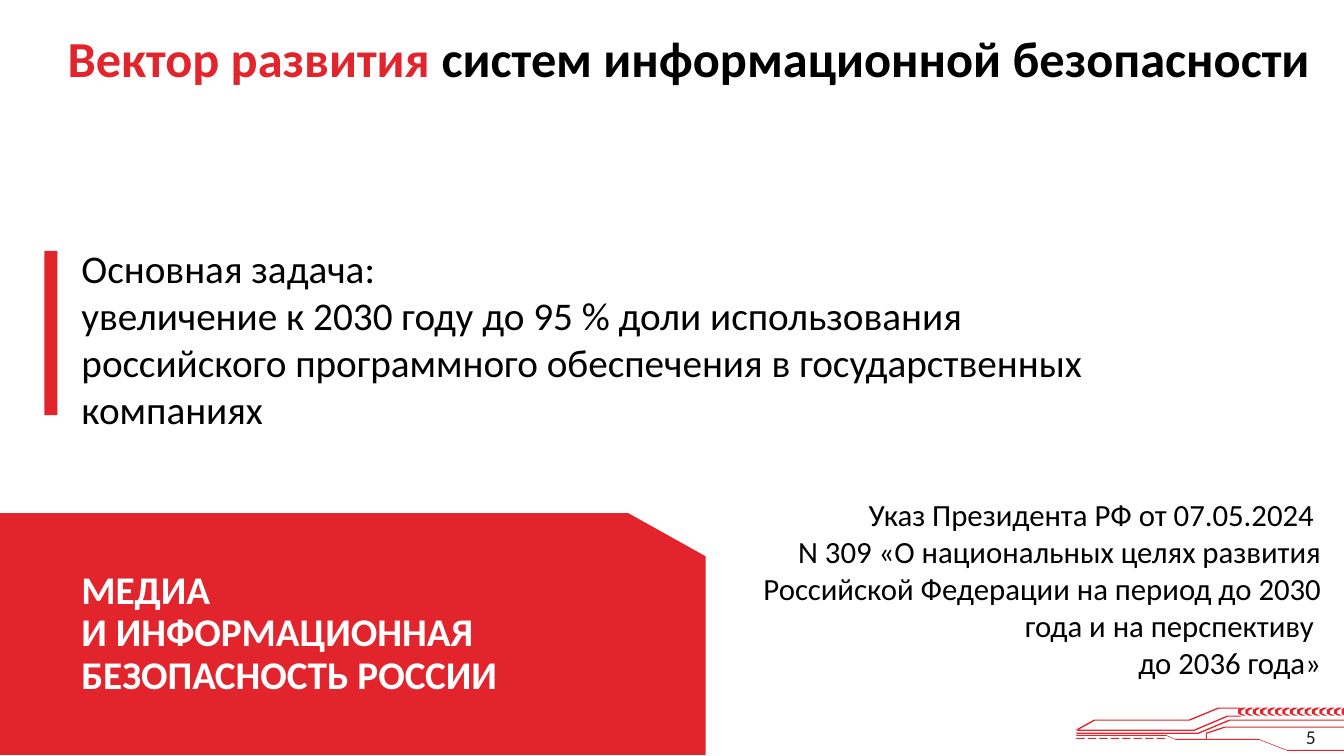
from pptx import Presentation
from pptx.dml.color import RGBColor
from pptx.enum.shapes import MSO_SHAPE
from pptx.enum.text import MSO_ANCHOR as Anchor, MSO_AUTO_SIZE as AutoSize, PP_ALIGN as Align
from pptx.util import Inches, Pt

RED = RGBColor(0xE2, 0x25, 0x2C)
BLACK = RGBColor(0, 0, 0)
DARK = RGBColor(0x23, 0x1F, 0x20)
WHITE = RGBColor(0xFF, 0xFF, 0xFF)
FONT = "Calibri"
TRACE_WIDTH = 0.01
TRACES = [
    [(0, 0.27), (0.89, 0.27), (0.98, 0.31), (1.29, 0.31)],
    [(0, 0.22), (0.18, 0.12), (1.12, 0.12), (1.41, 0), (1.63, 0)],
    [(0, 0.22), (1.17, 0.22), (1.5, 0.08), (1.63, 0.08)],
    [(0, 0.25), (1.21, 0.25), (1.52, 0.12), (2.66, 0.12)],
    [(2.66, 0.19), (1.47, 0.19), (1.29, 0.25), (1.29, 0.31),
     (1.81, 0.31), (2.09, 0.42), (2.66, 0.42)],
]
HOOK = [(0.08, 0), (0.04, 0), (0, 0.02), (0, 0.06),
        (0.04, 0.08), (0.08, 0.08), (0.03, 0.06), (0.03, 0.03)]


def paint_red(shape):
    shape.shadow.inherit = False
    shape.fill.solid()
    shape.fill.fore_color.rgb = RED
    shape.line.fill.background()


def style(font, size, color, bold=False):
    font.name = FONT
    font.size = Pt(size)
    font.bold = bold
    font.color.rgb = color


def add_outline(slide, contours):
    points = [[(Inches(x), Inches(y)) for x, y in contour] for contour in contours]
    builder = slide.shapes.build_freeform(*points[0][0], scale=1.0)
    builder.add_line_segments(points[0][1:], close=True)
    for contour in points[1:]:
        builder.move_to(*contour[0])
        builder.add_line_segments(contour[1:], close=True)
    paint_red(builder.convert_to_shape())


def add_text(slide, box, paragraphs, size, color, bold=False, align=Align.LEFT,
             anchor=Anchor.TOP, line_spacing=None, inset=None):
    frame = slide.shapes.add_textbox(*map(Inches, box)).text_frame
    frame.word_wrap = True
    frame.vertical_anchor = anchor
    if inset is not None:
        frame.margin_left = frame.margin_right = Inches(inset)
        frame.margin_top = frame.margin_bottom = Inches(inset)
    for index, text in enumerate(paragraphs):
        paragraph = frame.paragraphs[0] if index == 0 else frame.add_paragraph()
        paragraph.text = text
        paragraph.alignment = align
        paragraph.line_spacing = line_spacing
        style(paragraph.font, size, color, bold)


def add_circuit(slide, left, top, width):
    def ribbon(trace):
        return trace + [(x + TRACE_WIDTH, y + TRACE_WIDTH) for x, y in reversed(trace)]

    dashes = [ribbon([(0.114 * i, 0.3), (0.114 * i + 0.08, 0.3)]) for i in range(8)]
    hooks = [[(1.61 + 0.0733 * i + x, y) for x, y in HOOK] for i in range(15)]
    contours = dashes + [ribbon(trace) for trace in TRACES] + hooks
    add_outline(slide, [[(left + min(x, width), top + y) for x, y in contour]
                        for contour in contours])


def add_title(slide, box):
    title = slide.shapes.title
    title.left, title.top, title.width, title.height = map(Inches, box)
    frame = title.text_frame
    frame.word_wrap = True
    frame.auto_size = AutoSize.NONE
    frame.vertical_anchor = Anchor.TOP
    frame.margin_left = frame.margin_right = frame.margin_bottom = 0
    frame.margin_top = Inches(0.01)
    heading = frame.paragraphs[0]
    heading.alignment = Align.LEFT
    for text, color in [("Вектор развития ", RED),
                        ("систем информационной безопасности", BLACK)]:
        run = heading.add_run()
        run.text = text
        style(run.font, 36, color, bold=True)


def add_task(slide, left, top, width, height):
    accent = slide.shapes.add_shape(MSO_SHAPE.RECTANGLE, Inches(left), Inches(top + 0.12),
                                    Inches(0.13), Inches(1.63))
    paint_red(accent)
    add_text(slide, (left + 0.27, top, width - 0.27, height),
             ["Основная задача:",
              "увеличение к 2030 году до 95 % доли использования российского "
              "программного обеспечения в государственных компаниях"], 28, BLACK)


def add_topic_panel(slide, left, top, width, height):
    right, bottom = left + width, top + height
    add_outline(slide, [[(left, top), (right - 0.77, top), (right, top + 0.43),
                         (right, bottom), (left, bottom)]])
    add_text(slide, (left + 0.71, top + 0.66, width - 0.97, 1.08),
             ["МЕДИА \vИ ИНФОРМАЦИОННАЯ БЕЗОПАСНОСТЬ РОССИИ"], 28, WHITE, bold=True,
             anchor=Anchor.MIDDLE, line_spacing=0.9)


def add_decree(slide, box):
    add_text(slide, box,
             ["Указ Президента РФ от 07.05.2024 \vN 309 «О национальных целях развития "
              "Российской Федерации на период до 2030 года и на перспективу \v"
              "до 2036 года»"], 22, BLACK, align=Align.RIGHT)


def add_page_number(slide, box):
    add_text(slide, box, ["5"], 14, DARK, align=Align.RIGHT, anchor=Anchor.MIDDLE, inset=0)


def main():
    deck = Presentation()
    deck.slide_width, deck.slide_height = Inches(13.33), Inches(7.5)
    slide = deck.slides.add_slide(deck.slide_layouts[5])
    add_title(slide, (0.67, 0.26, 12.53, 1.23))
    add_circuit(slide, 10.67, 7.02, 2.66)
    add_task(slide, 0.44, 2.37, 11.21, 1.99)
    add_topic_panel(slide, 0, 5.09, 7, 2.4)
    add_decree(slide, (7.01, 4.87, 6.19, 1.95))
    add_page_number(slide, (12.5, 7.19, 0.55, 0.24))
    deck.save("out.pptx")


if __name__ == "__main__":
    main()
